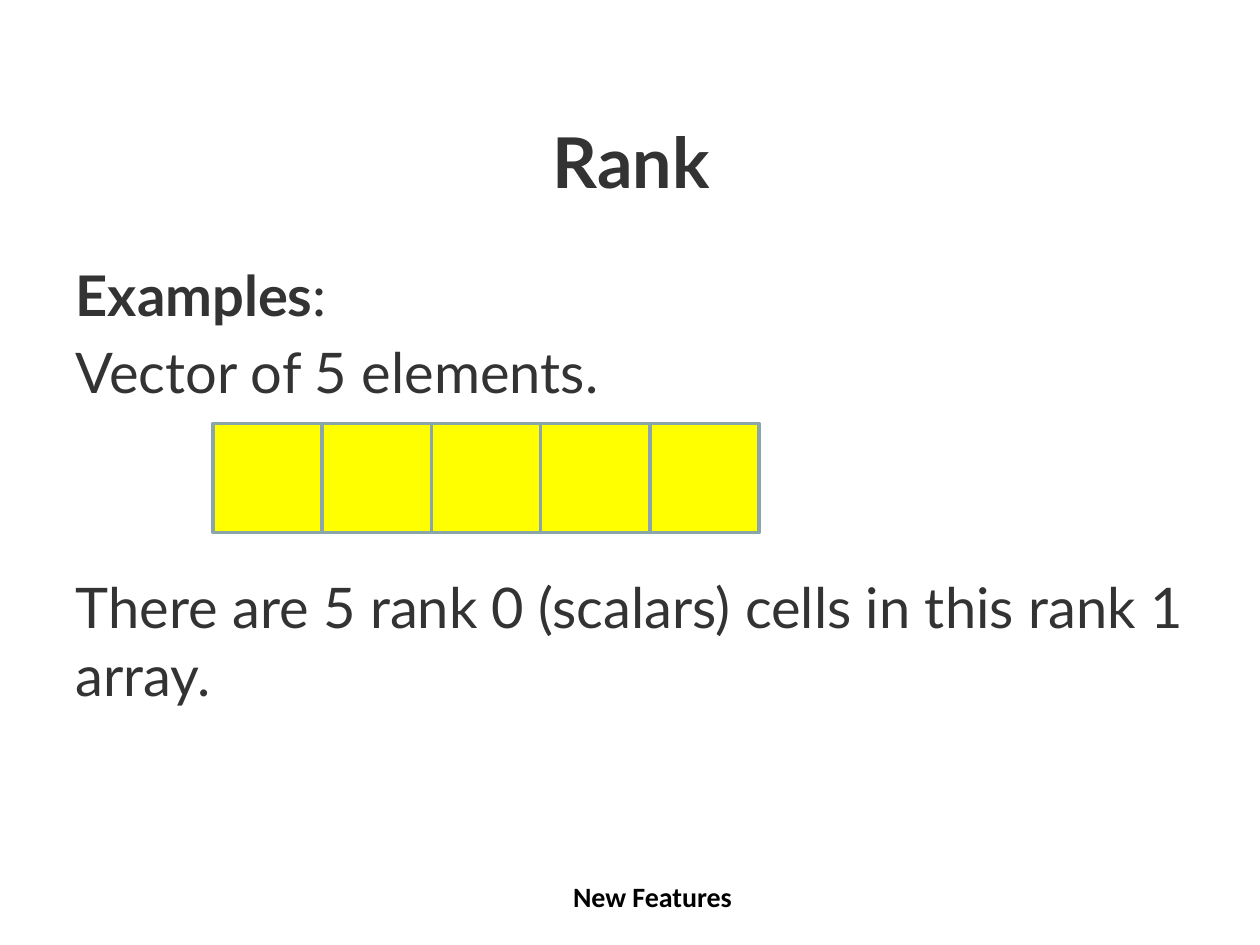
"""Build the Rank slide: a vector drawn as a row of five scalar cells."""
import pptx
import pptx.dml.color
import pptx.enum.shapes
import pptx.enum.text
import pptx.oxml.ns
import pptx.util

Inches, Pt = pptx.util.Inches, pptx.util.Pt
ALIGN = pptx.enum.text.PP_ALIGN

HUES = {"text": "333333", "foot": "000000", "cell": "FFFF00", "edge": "8AA6A8"}
TITLE = [(0, [("Rank", True)])]
BODY = [
    (0, [("Examples", True), (":", False)]),
    (5.5, [("Vector of 5 elements.", False)]),
    (96, [("There are 5 rank 0 (scalars) cells in this rank 1 array.", False)]),
]
FOOT = [(0, [("New Features", True)])]
COUNT, LEFT, TOP, SIDE = 5, 1.69, 3.36, 0.867

LOOKS = {
    "title": {"name": "Lato", "size": Pt(40)},
    "body": {"name": "Lato", "size": Pt(32)},
    "foot": {"name": "Calibri", "size": Pt(16)},
}


def color(key):
    return pptx.dml.color.RGBColor.from_string(HUES[key])


def place(shape, box):
    for name, value in zip(("left", "top", "width", "height"), box):
        setattr(shape, name, Inches(value))


def write(shape, lines, look, hue, align):
    frame = shape.text_frame
    frame.word_wrap = True
    frame.auto_size = pptx.enum.text.MSO_AUTO_SIZE.NONE
    for i, (space, runs) in enumerate(lines):
        para = frame.paragraphs[0] if i == 0 else frame.add_paragraph()
        props = para._p.get_or_add_pPr()
        props.set("marL", "0")
        props.set("indent", "0")
        pptx.oxml.ns.qn("a:buNone")
        props.append(pptx.oxml.parse_xml(
            "<a:buNone %s/>" % pptx.oxml.ns.nsdecls("a")))
        para.space_before = Pt(space)
        para.alignment = align
        for text, bold in runs:
            run = para.add_run()
            run.text = text
            for name, value in {**LOOKS[look], "bold": bold}.items():
                setattr(run.font, name, value)
            run.font.color.rgb = color(hue)


def draw(slide, col):
    cell = slide.shapes.add_shape(
        pptx.enum.shapes.MSO_SHAPE.RECTANGLE,
        Inches(LEFT + col * SIDE), Inches(TOP), Inches(SIDE), Inches(SIDE))
    cell.shadow.inherit = False
    cell.fill.solid()
    cell.fill.fore_color.rgb = color("cell")
    cell.line.color.rgb = color("edge")
    cell.line.width = Pt(2)


def main():
    deck = pptx.Presentation()
    deck.slide_width, deck.slide_height = Inches(10), Inches(7.5)
    slide = deck.slides.add_slide(deck.slide_layouts[1])
    title, body = slide.placeholders
    place(title, (0.51, 0.84, 9, 0.87))
    write(title, TITLE, "title", "text", ALIGN.CENTER)
    place(body, (0.5, 2.02, 9, 4.68))
    write(body, BODY, "body", "text", ALIGN.LEFT)
    foot = slide.shapes.add_textbox(0, 0, 0, 0)
    place(foot, (4.45, 6.93, 1.5, 0.4))
    write(foot, FOOT, "foot", "foot", ALIGN.LEFT)
    for col in range(COUNT):
        draw(slide, col)
    deck.save("out.pptx")


if __name__ == "__main__":
    main()
